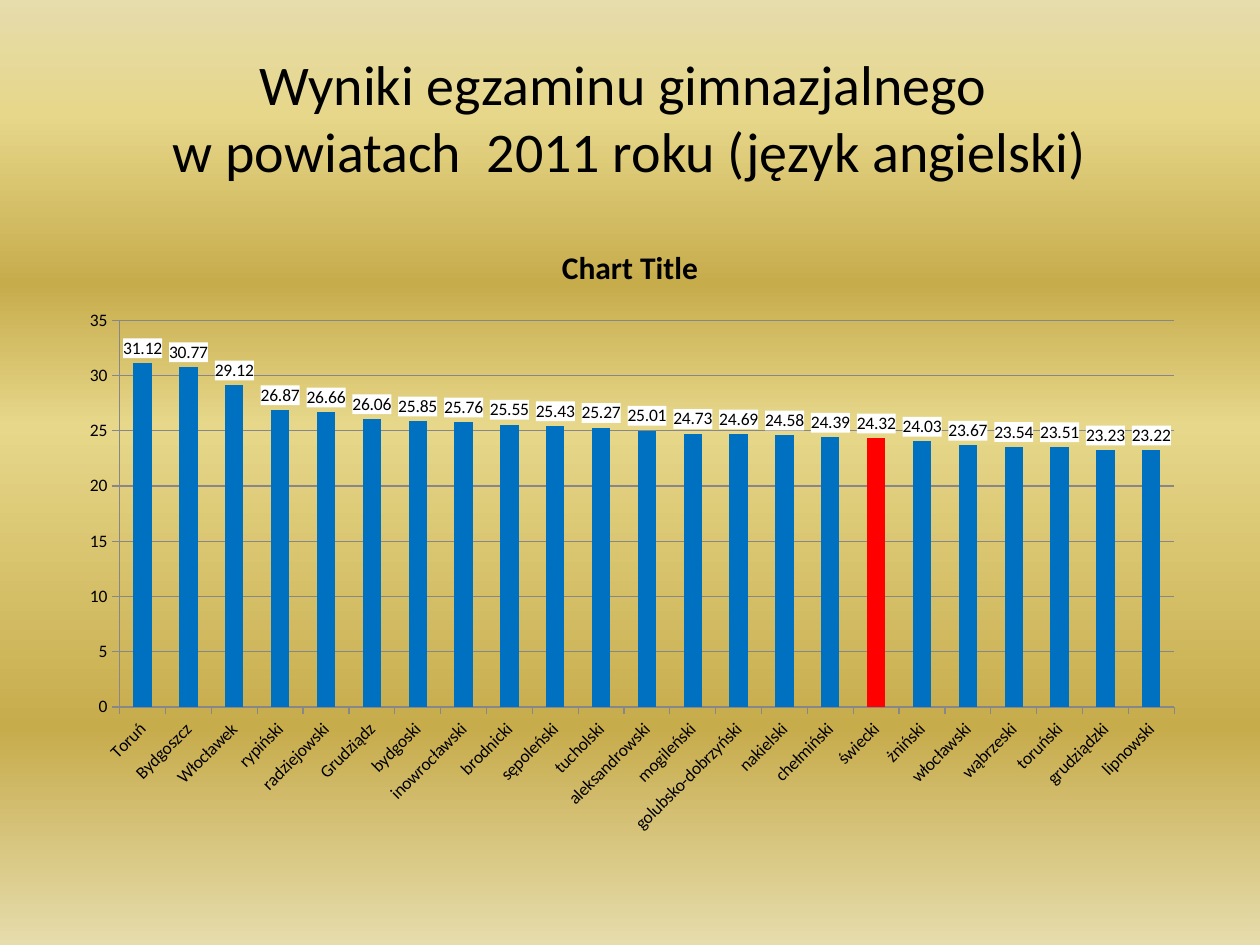
from lxml import etree
from pptx import Presentation
from pptx import util as u
from pptx.chart.data import CategoryChartData
from pptx.dml.color import RGBColor
from pptx.enum import chart as kinds, text
from pptx.oxml import parse_xml
from pptx.oxml.ns import nsdecls, qn

FONT = "Calibri"
COLOURS = {
    "text": "000000",
    "bar": "0070C0",
    "highlight": "FF0000",
    "label": "FFFFFF",
    "line": "878787",
    "cream": "E6DCAC",
    "light": "E6D78A",
    "gold": "C7AC4C",
}
STOPS = [(0, "cream"), (12, "light"), (30, "gold"), (45, "light"), (77, "gold"), (100, "cream")]
RESULTS = {
    "Toruń": 31.12, "Bydgoszcz": 30.77, "Włocławek": 29.12, "rypiński": 26.87,
    "radziejowski": 26.66, "Grudziądz": 26.06, "bydgoski": 25.85,
    "inowrocławski": 25.76, "brodnicki": 25.55, "sępoleński": 25.43,
    "tucholski": 25.27, "aleksandrowski": 25.01, "mogileński": 24.73,
    "golubsko-dobrzyński": 24.69, "nakielski": 24.58, "chełmiński": 24.39,
    "świecki": 24.32, "żniński": 24.03, "włocławski": 23.67, "wąbrzeski": 23.54,
    "toruński": 23.51, "grudziądzki": 23.23, "lipnowski": 23.22,
}
HIGHLIGHTED = "świecki"
PLOT_LAYOUT = {"x": 0.05, "y": 0.16, "w": 0.93, "h": 0.62}


def colour(name):
    """Return the named colour."""
    return RGBColor.from_string(COLOURS[name])


def style_font(font, size, bold=False):
    """Apply the slide's typeface and text colour."""
    font.name, font.size, font.bold = FONT, u.Pt(size), bold
    font.color.rgb = colour("text")


def paint_background(slide):
    """Fill the background with the golden vertical gradient."""
    fill = slide.background.fill
    fill.gradient()
    fill.gradient_angle = 270
    stop_list = next(slide.element.iter(qn("a:gsLst")))
    for stop in list(stop_list):
        stop_list.remove(stop)
    for percent, name in STOPS:
        stop = etree.SubElement(stop_list, qn("a:gs"), pos=str(percent * 1000))
        etree.SubElement(stop, qn("a:srgbClr"), val=COLOURS[name])


def add_title(slide, words):
    """Add the centred slide title."""
    box = slide.shapes.add_textbox(u.Pt(36), u.Pt(21.6), u.Pt(648), u.Pt(90))
    frame = box.text_frame
    frame.word_wrap = True
    frame.vertical_anchor = text.MSO_ANCHOR.MIDDLE
    frame.text = words
    para = frame.paragraphs[0]
    para.alignment = text.PP_ALIGN.CENTER
    for span in para.runs:
        style_font(span.font, 32)


def style_axis(axis):
    """Format an axis line, its ticks and its labels."""
    axis.major_tick_mark = kinds.XL_TICK_MARK.OUTSIDE
    axis.format.line.color.rgb = colour("line")
    style_font(axis.tick_labels.font, 10)


def style_labels(plot):
    """Show values above the bars on white plates."""
    plot.has_data_labels = True
    labels = plot.data_labels
    labels.show_value = True
    labels.number_format, labels.number_format_is_linked = "0.00", False
    labels.position = kinds.XL_LABEL_POSITION.OUTSIDE_END
    style_font(labels.font, 10)
    plate = parse_xml(
        f'<c:spPr {nsdecls("c", "a")}><a:solidFill>'
        f'<a:srgbClr val="{COLOURS["label"]}"/></a:solidFill></c:spPr>'
    )
    next(plot._element.iter(qn("c:dLbls"))).find(qn("c:txPr")).addprevious(plate)


def place_plot(chart):
    """Fix the inner plot area within the chart frame."""
    area = chart._chartSpace.chart.plotArea
    for old in area.findall(qn("c:layout")):
        area.remove(old)
    layout = etree.Element(qn("c:layout"))
    manual = etree.SubElement(layout, qn("c:manualLayout"))
    settings = {"layoutTarget": "inner", "xMode": "edge", "yMode": "edge", **PLOT_LAYOUT}
    for name, value in settings.items():
        etree.SubElement(manual, qn(f"c:{name}"), val=str(value))
    area.insert(0, layout)


def add_results_chart(slide):
    """Add the column chart of district results."""
    data = CategoryChartData(number_format="0.00")
    data.categories = list(RESULTS)
    data.add_series("Series 1", list(RESULTS.values()))
    chart = slide.shapes.add_chart(
        kinds.XL_CHART_TYPE.COLUMN_CLUSTERED,
        u.Pt(36), u.Pt(126), u.Pt(648), u.Pt(356.4), data,
    ).chart
    style_font(chart.font, 10)
    chart.has_legend = False
    chart.has_title = True
    heading = chart.chart_title.text_frame
    heading.text = "Chart Title"
    style_font(heading.paragraphs[0].runs[0].font, 18, bold=True)

    plot = chart.plots[0]
    plot.gap_width = 150
    plot.vary_by_categories = False
    series = plot.series[0]
    series.format.fill.solid()
    series.format.fill.fore_color.rgb = colour("bar")
    fill = series.points[list(RESULTS).index(HIGHLIGHTED)].format.fill
    fill.solid()
    fill.fore_color.rgb = colour("highlight")
    style_labels(plot)

    for axis in (chart.category_axis, chart.value_axis):
        style_axis(axis)
    slant = chart.category_axis._element.find(qn("c:txPr")).find(qn("a:bodyPr"))
    slant.set("rot", str(-45 * 60000))
    scale = chart.value_axis
    scale.minimum_scale, scale.maximum_scale, scale.major_unit = 0, 35, 5
    scale.tick_labels.number_format = "0"
    scale.tick_labels.number_format_is_linked = False
    scale.has_major_gridlines = True
    scale.major_gridlines.format.line.color.rgb = colour("line")
    place_plot(chart)


def main():
    """Build and save the slide."""
    deck = Presentation()
    deck.slide_width, deck.slide_height = u.Pt(720), u.Pt(540)
    slide = deck.slides.add_slide(deck.slide_layouts[6])
    paint_background(slide)
    add_title(slide, "Wyniki egzaminu gimnazjalnego \vw powiatach  2011 roku (język angielski)")
    add_results_chart(slide)
    deck.save("out.pptx")


if __name__ == "__main__":
    main()
